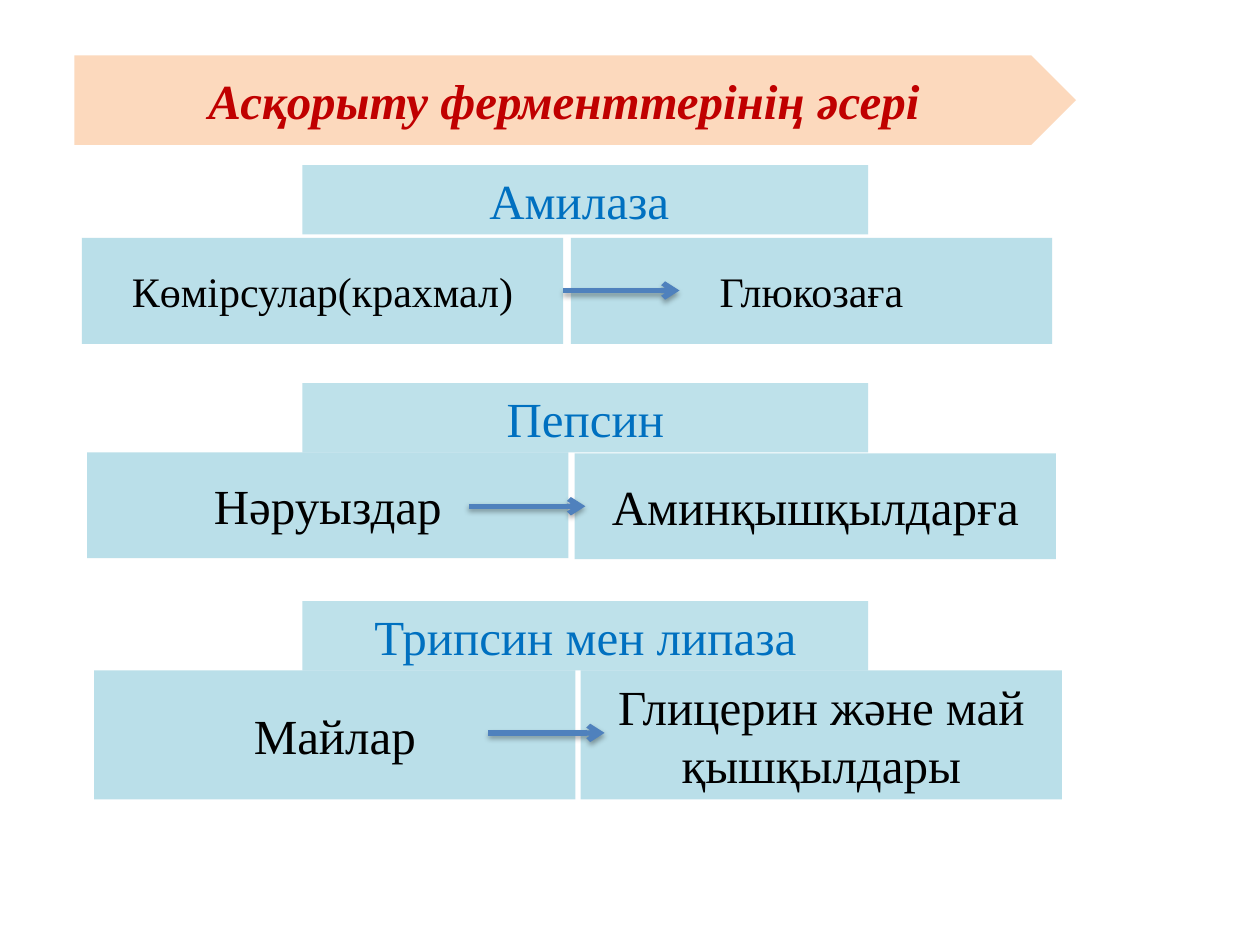
import pptx
import pptx.dml.color
import pptx.enum.shapes
import pptx.enum.text
import pptx.oxml
import pptx.oxml.ns
import pptx.util
from dataclasses import dataclass
from lxml import etree

Pt = pptx.util.Pt
SHAPES = pptx.enum.shapes.MSO_SHAPE


@dataclass(frozen=True)
class Theme:
    font: str = "Times New Roman"
    banner: str = "FAC090"
    box: str = "93CDDD"
    title: str = "C00000"
    enzyme: str = "0070C0"
    substance: str = "000000"
    arrow: str = "4F81BD"
    banner_opacity: int = 59
    enzyme_opacity: int = 60
    substance_opacity: int = 63
    large: int = 28
    small: int = 24


THEME = Theme()


def rgb(value):
    return pptx.dml.color.RGBColor.from_string(value)


def add_panel(slide, kind, box, color, opacity):
    """Add a borderless, partly transparent shape."""
    panel = slide.shapes.add_shape(kind, *map(Pt, box))
    panel.shadow.inherit = False
    panel.line.fill.background()
    panel.fill.solid()
    panel.fill.fore_color.rgb = rgb(color)
    srgb = panel.fill._xPr.find(".//" + pptx.oxml.ns.qn("a:srgbClr"))
    etree.SubElement(srgb, pptx.oxml.ns.qn("a:alpha"), val=str(opacity * 1000))
    return panel


def write(shape, text, size, color, emphasis=False):
    """Fill a shape with one centred paragraph."""
    frame = shape.text_frame
    frame.word_wrap = True
    frame.auto_size = pptx.enum.text.MSO_AUTO_SIZE.NONE
    frame.vertical_anchor = pptx.enum.text.MSO_ANCHOR.MIDDLE
    frame.text = text
    paragraph = frame.paragraphs[0]
    paragraph.alignment = pptx.enum.text.PP_ALIGN.CENTER
    font = paragraph.font
    font.name, font.size = THEME.font, Pt(size)
    font.color.rgb = rgb(color)
    font.bold = font.italic = emphasis


def add_arrow(slide, left, y, length):
    """Add a horizontal arrow with a soft shadow below it."""
    arrow = slide.shapes.add_connector(
        pptx.enum.shapes.MSO_CONNECTOR.STRAIGHT,
        Pt(left), Pt(y), Pt(left + length), Pt(y))
    arrow.line.color.rgb = rgb(THEME.arrow)
    arrow.line.width = Pt(3)
    etree.SubElement(arrow.line._get_or_add_ln(),
                     pptx.oxml.ns.qn("a:tailEnd"), type="arrow")
    arrow._element.spPr.append(pptx.oxml.parse_xml(
        f'<a:effectLst {pptx.oxml.ns.nsdecls("a")}>'
        f'<a:outerShdw blurRad="{Pt(3.1)}" dist="{Pt(1.8)}" dir="5400000" rotWithShape="0">'
        '<a:srgbClr val="000000"><a:alpha val="35000"/></a:srgbClr>'
        '</a:outerShdw></a:effectLst>'))


def add_banner(slide, box, text):
    """Pentagon banner with the slide title over it."""
    left, top, width, height = box
    banner = add_panel(slide, SHAPES.PENTAGON, box, THEME.banner, THEME.banner_opacity)
    title = slide.shapes.title
    # The text area ends halfway along the pointed tip
    title.left, title.top = Pt(left), Pt(top)
    title.width, title.height = Pt(width - height / 4), Pt(height)
    write(title, text, THEME.large, THEME.title, emphasis=True)
    banner._element.addnext(title._element)


def add_reaction(slide, box, enzyme, substrate, product, size,
                 lead, gap, arrow_left, product_drop=0):
    """Enzyme heading over a substrate box, an arrow and a product box."""
    left, top, width, height = box
    heading_height, heading_width, heading_left = 39.6, 323.3, 172.8
    half = 275
    heading = add_panel(slide, SHAPES.RECTANGLE,
                        (heading_left, top, heading_width, heading_height),
                        THEME.box, THEME.enzyme_opacity)
    write(heading, enzyme, THEME.large, THEME.enzyme)

    row_top = top + heading_height + lead
    row_height = height - heading_height - lead
    sides = ((left, row_top, substrate),
             (left + half + gap, row_top + product_drop, product))
    for x, y, text in sides:
        substance = add_panel(slide, SHAPES.RECTANGLE, (x, y, half, row_height),
                              THEME.box, THEME.substance_opacity)
        write(substance, text, size, THEME.substance)
    return arrow_left, row_top


def main():
    deck = pptx.Presentation()
    deck.slide_width, deck.slide_height = Pt(720), Pt(540)
    slide = deck.slides.add_slide(deck.slide_layouts[5])

    add_banner(slide, (42.5, 31.7, 572.4, 51.1), "Асқорыту ферменттерінің әсері")

    # left, height, enzyme, substrate, product, size, lead, gap, arrow x, drop
    reactions = (
        (46.8, 102.2, "Амилаза ", "Көмірсулар(крахмал)", "Глюкозаға",
         THEME.small, 2.1, 4.4, 321.8, 0),
        (49.8, 100.1, "Пепсин", "Нәруыздар", "Аминқышқылдарға",
         THEME.large, 0, 3.6, 268, 0.6),
        (53.8, 113.3, "Трипсин мен липаза", "Майлар", "Глицерин және май қышқылдары",
         THEME.large, 0, 3, 279, 0),
    )
    first_top, pitch, row_width = 94.3, 124.6, 554
    arrows = [
        add_reaction(slide, (left, first_top + index * pitch, row_width, height), *parts)
        for index, (left, height, *parts) in enumerate(reactions)
    ]

    # Arrows lie over all the boxes
    for (left, row_top), drop in zip(arrows, (30, 30.8, 35.7)):
        add_arrow(slide, left, row_top + drop, 66.5)

    deck.save("out.pptx")


if __name__ == "__main__":
    main()
